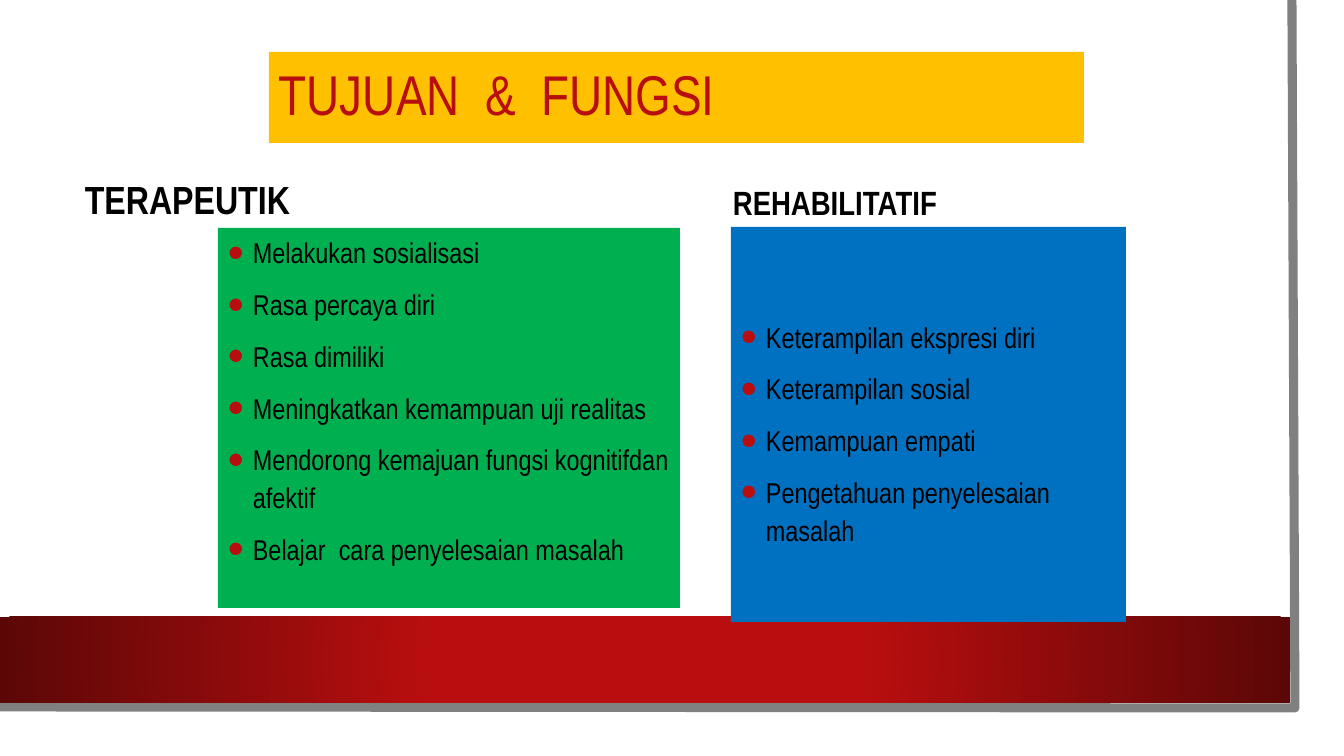
from lxml import etree
from pptx import Presentation
from pptx.dml.color import RGBColor
from pptx.enum.shapes import MSO_SHAPE
from pptx.enum.text import MSO_ANCHOR, PP_ALIGN
from pptx.oxml import parse_xml
from pptx.oxml.ns import nsdecls, qn
from pptx.util import Pt

PX = 914400 / 100.8
FONT = "Arial Narrow"
COLORS = {
    "white": "FFFFFF", "gray": "808080", "red": "B80E0F", "dark_red": "5C0707",
    "amber": "FFC000", "green": "00B050", "blue": "0070C0", "black": "000000",
}
THERAPEUTIC = [
    "Melakukan sosialisasi",
    "Rasa percaya diri",
    "Rasa dimiliki",
    "Meningkatkan kemampuan uji realitas",
    "Mendorong kemajuan fungsi kognitifdan afektif",
    "Belajar  cara penyelesaian masalah",
]
REHABILITATIVE = [
    "Keterampilan ekspresi diri",
    "Keterampilan sosial",
    "Kemampuan empati",
    "Pengetahuan penyelesaian masalah",
]


def px(n):
    return round(n * PX)


def rgb(name):
    return RGBColor.from_string(COLORS[name])


def add_rect(slide, box, color):
    sp = slide.shapes.add_shape(MSO_SHAPE.RECTANGLE, *map(px, box))
    sp.shadow.inherit = False
    sp.fill.solid()
    sp.fill.fore_color.rgb = rgb(color)
    sp.line.fill.background()
    return sp


def add_frame(slide):
    builder = slide.shapes.build_freeform(1292, 0, scale=PX)
    builder.add_line_segments([(1295, 708), (-3, 707)], close=False)
    sp = builder.convert_to_shape()
    sp.shadow.inherit = False
    sp.fill.background()
    sp.line.color.rgb = rgb("gray")
    sp.line.width = Pt(6.5)


def add_band(slide, box):
    sp = add_rect(slide, box, "red")
    stops = "".join(
        f'<a:gs pos="{pos}"><a:srgbClr val="{COLORS[name]}"/></a:gs>'
        for pos, name in ((34000, "red"), (100000, "dark_red")))
    gradient = parse_xml(
        f'<a:gradFill {nsdecls("a")} rotWithShape="1"><a:gsLst>{stops}</a:gsLst>'
        '<a:path path="circle"><a:fillToRect l="50000" t="50000" r="50000" b="50000"/>'
        '</a:path></a:gradFill>')
    solid = sp._element.spPr.find(qn("a:solidFill"))
    sp._element.spPr.replace(solid, gradient)


def add_bullet(p):
    pPr = p._p.get_or_add_pPr()
    pPr.set("marL", str(px(25)))
    pPr.set("indent", str(-px(25)))
    color = etree.SubElement(pPr, qn("a:buClr"))
    etree.SubElement(color, qn("a:srgbClr")).set("val", COLORS["red"])
    etree.SubElement(pPr, qn("a:buSzPct")).set("val", "160000")
    etree.SubElement(pPr, qn("a:buFont")).set("typeface", "Arial")
    etree.SubElement(pPr, qn("a:buChar")).set("char", "•")


def write(sp, lines, size, color, spacing, anchor, bold=False, bullets=False):
    tf = sp.text_frame
    tf.word_wrap = True
    tf.vertical_anchor = anchor
    for i, line in enumerate(lines):
        p = tf.paragraphs[0] if i == 0 else tf.add_paragraph()
        p.text = line
        p.alignment = PP_ALIGN.LEFT
        p.line_spacing = spacing
        p.space_before = Pt(10 if i else 0)
        if bullets:
            add_bullet(p)
        for r in p.runs:
            r.font.name = FONT
            r.font.size = Pt(size)
            r.font.bold = bold
            r.font.color.rgb = rgb(color)


def add_heading(slide, box, text, size, spacing):
    sp = slide.shapes.add_textbox(*map(px, box))
    write(sp, [text], size, "black", spacing, MSO_ANCHOR.BOTTOM, bold=True)


def add_panel(slide, box, color, items, anchor, inset):
    sp = add_rect(slide, box, color)
    sp.text_frame.margin_top = px(inset)
    write(sp, items, 20.4, "black", 1.1, anchor, bullets=True)


def main():
    prs = Presentation()
    prs.slide_width, prs.slide_height = px(1344), px(756)
    slide = prs.slides.add_slide(prs.slide_layouts[6])

    # Page backdrop
    add_rect(slide, (0, 0, 1320, 733), "white")
    add_frame(slide)
    add_band(slide, (0, 617, 1290, 86))

    # Title
    title = add_rect(slide, (269, 52, 815, 91), "amber")
    write(title, ["TUJUAN  &  FUNGSI"], 40, "red", 0.9, MSO_ANCHOR.MIDDLE)

    # Therapeutic column
    add_heading(slide, (75, 157, 584, 71), "TERAPEUTIK", 28, 0.9)
    add_panel(slide, (218, 228, 462, 380), "green", THERAPEUTIC, MSO_ANCHOR.TOP, 4)

    # Rehabilitative column
    add_heading(slide, (723, 156, 403, 71), "REHABILITATIF", 24, 1.2)
    add_panel(slide, (731, 227, 395, 395), "blue", REHABILITATIVE, MSO_ANCHOR.MIDDLE, 19)

    prs.save("out.pptx")


if __name__ == "__main__":
    main()
